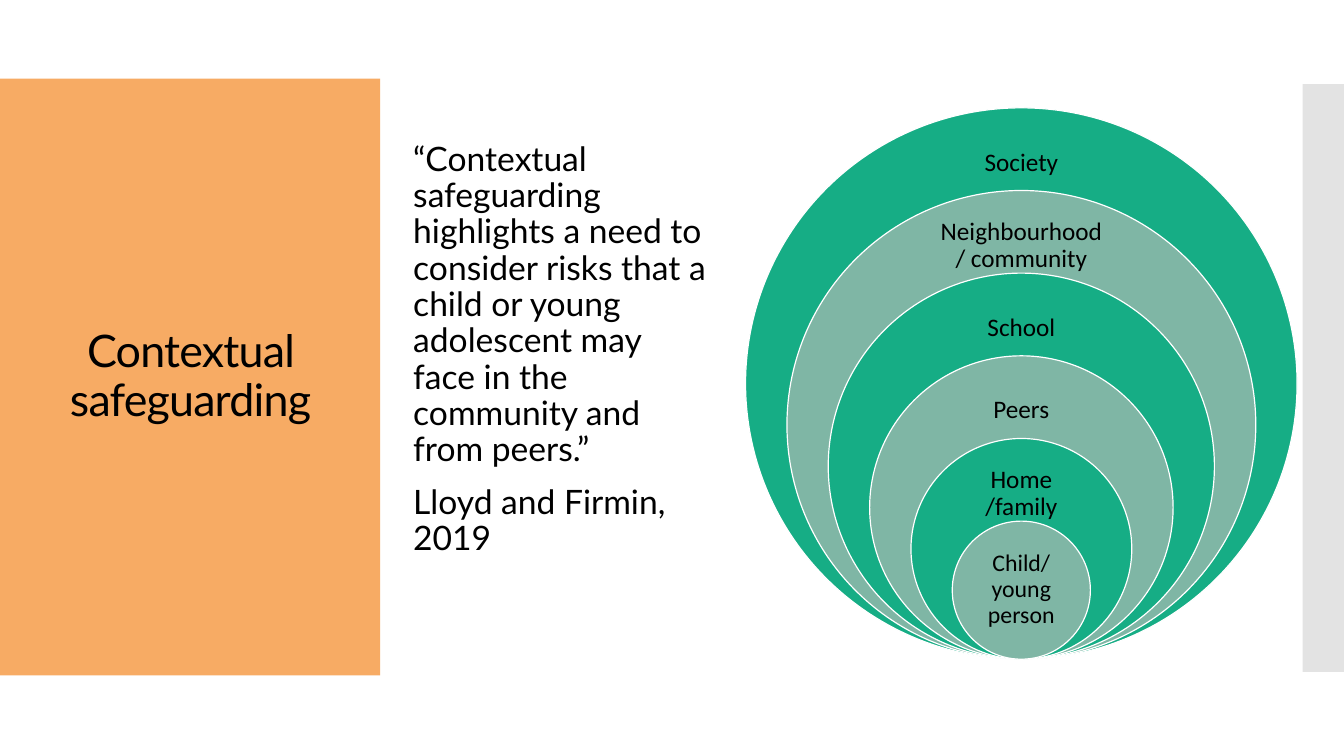
from pptx import Presentation
from pptx.dml.color import RGBColor as Rgb
from pptx.enum.shapes import MSO_SHAPE as Kind
from pptx.enum.text import MSO_ANCHOR as Anchor, PP_ALIGN as Align
from pptx.oxml.ns import qn
from pptx.util import Inches as In, Pt
from lxml.etree import SubElement as Sub


def paint(part, tone):
    part.solid()
    part.fore_color.rgb = Rgb.from_string(tone)


def write(spot, texts, font, size, look, pad=(0.1, 0.05, 0.1, 0.05)):
    box = slide.shapes.add_textbox(*map(In, spot))
    frame = box.text_frame
    frame.word_wrap = True
    frame.vertical_anchor = Anchor.MIDDLE
    for side, gap in zip(("left", "top", "right", "bottom"), pad):
        setattr(frame, f"margin_{side}", In(gap))
    for n, text in enumerate(texts):
        para = frame.paragraphs[0] if n == 0 else frame.add_paragraph()
        for key, value in {"line_spacing": 0.9, **look}.items():
            setattr(para, key, value)
        run = para.add_run()
        run.text = text
        for key, value in {"name": font, "size": Pt(size)}.items():
            setattr(run.font, key, value)
        paint(run.font.fill, "000000")
    return run


deck = Presentation()
W, H = 13.33, 7.5
deck.slide_width, deck.slide_height = In(W), In(H)
slide = deck.slides.add_slide(deck.slide_layouts[6])

# Side panels
panels = [((-0.11, 0.78, 3.88, 5.92), "F7AB64"),
          ((W - 0.41, H / 9, 0.41, H * 7 / 9), "C8C8C8")]
for spot, tone in panels:
    panel = slide.shapes.add_shape(Kind.RECTANGLE, *map(In, spot))
    panel.shadow.inherit = False
    paint(panel.fill, tone)
    panel.line.fill.background()
# The grey panel comes last and is half clear
color = panel.fill._xPr.find(qn("a:solidFill"))[0]
Sub(color, qn("a:alpha")).set("val", "50000")

# Title and quote
title = write((0.28, 1.23, 3.22, 5.03), ["Contextual safeguarding"],
              "Lato", 32, {"alignment": Align.CENTER})
title.font._element.set("spc", "-60")
quote = ["“Contextual safeguarding highlights a need to consider risks that a "
         "child or young adolescent may face in the community and from peers.”",
         "Lloyd and Firmin, 2019"]
write((4, 0.94, 3.12, 5.6), quote, "Lato", 24,
      {"alignment": Align.LEFT, "space_before": Pt(12)},
      (0.1, 0.05, 0.1, 0.58))

# Nested circles share a centre line and a base; each is one step smaller
MID, BASE, WIDE, STEP = 10.13, 6.54, 5.47, 0.82
rings = [("Society", 2.05), ("Neighbourhood / community", 2.01),
         ("School", 1.98), ("Peers", 1.63), ("Home /family", 1.42),
         ("Child/ young person", 0.97)]
for n, (name, width) in enumerate(rings):
    size = WIDE - n * STEP
    top = BASE - size
    ring = slide.shapes.add_shape(Kind.OVAL, In(MID - size / 2), In(top),
                                  In(size), In(size))
    ring.shadow.inherit = False
    paint(ring.fill, ("16AD85", "7FB6A5")[n % 2])
    paint(ring.line.fill, "FFFFFF")
    ring.line.width = Pt(0.85)
    core = n == len(rings) - 1
    drop, tall, points, pad = ((0.34, 0.68, 17, 0.13) if core
                               else (0.27, 0.55, 18, 0.14))
    write((MID - width / 2, top + drop, width, tall), [name],
          "Calibri", points, {"alignment": Align.CENTER}, (pad,) * 4)

deck.save("out.pptx")
